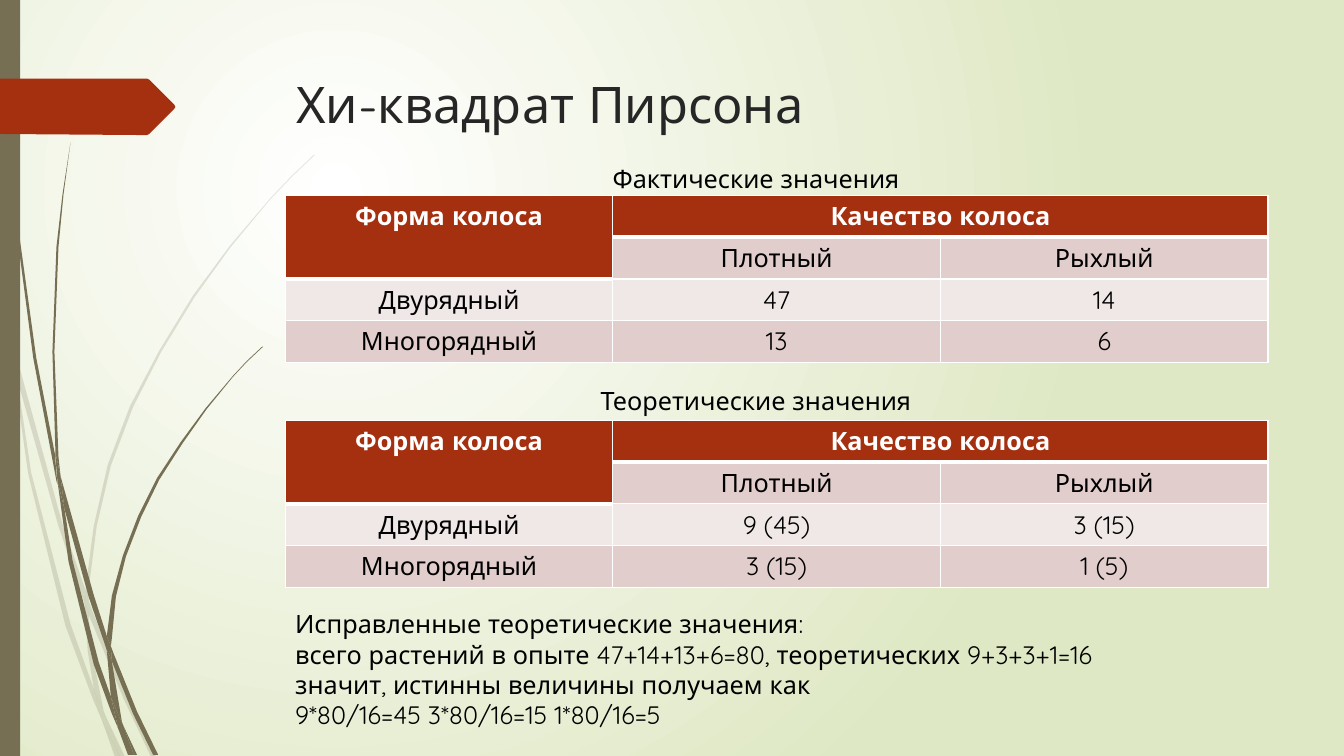
from lxml.etree import SubElement
from pptx import Presentation
from pptx.dml.color import RGBColor
from pptx.enum.shapes import MSO_SHAPE
from pptx.enum.text import MSO_ANCHOR, MSO_AUTO_SIZE, PP_ALIGN
from pptx.oxml.ns import qn
from pptx.util import Cm, Pt

COLORS = {
    "white": "FFFFFF", "meadow": "DFE8C4", "stalk": "766F54", "accent": "A53010",
    "title": "262626", "text": "000000", "dark band": "E1CDCC", "light band": "F0E8E7",
}
INCH = 2.54

PALE_STALKS = [
    [(11, 350), (9, 322), (0, 282), (0, 299), (10, 344)],
    [(58, 522), (84, 599), (85, 586), (62, 520), (14, 345), (17, 376)],
    [(92, 607), (88, 596), (88, 610), (123, 694), (150, 751), (155, 751), (127, 692)],
    [(119, 751), (124, 751), (105, 711)],
    [(93, 683), (70, 619), (31, 469), (17, 376), (11, 350), (28, 470), (65, 621),
     (92, 693), (101, 714), (99, 707)],
    [(84, 599), (87, 646), (93, 683), (96, 692), (105, 711), (103, 706), (91, 646),
     (88, 610), (88, 608)],
    [(88, 584), (96, 522), (110, 462), (132, 404), (160, 349), (193, 295), (229, 245),
     (268, 198), (290, 175), (312, 154), (312, 153), (289, 175), (268, 197), (228, 244),
     (191, 294), (158, 348), (129, 403), (107, 461), (93, 522), (85, 584), (85, 586),
     (88, 596)],
    [(101, 714), (114, 751), (119, 751)],
    [(88, 608), (88, 610), (88, 596), (85, 586), (84, 599)],
    [(96, 692), (93, 683), (99, 707), (101, 714), (119, 751), (105, 711)],
]
DARK_STALKS = [
    [(7, 110), (17, 233), (33, 355), (56, 477), (57, 481), (55, 457), (55, 453),
     (36, 355), (19, 232), (8, 109), (5, 48), (4, 0), (3, 0), (4, 48)],
    [(88, 592), (106, 645), (106, 633), (106, 631), (93, 590), (60, 472), (64, 505)],
    [(113, 649), (110, 641), (111, 656), (132, 708), (152, 749), (157, 749), (136, 706)],
    [(110, 691), (98, 657), (72, 556), (64, 505), (57, 477), (68, 557), (93, 659),
     (111, 708), (117, 722), (116, 717)],
    [(60, 472), (58, 453), (54, 349), (58, 245), (63, 193), (70, 141), (62, 193),
     (56, 245), (52, 349), (55, 449)],
    [(133, 749), (136, 749), (122, 719)],
    [(57, 477), (64, 505), (60, 472), (55, 449), (55, 453)],
    [(111, 633), (115, 592), (125, 552), (140, 513), (158, 476), (181, 440), (205, 406),
     (231, 374), (245, 359), (261, 344), (260, 344), (245, 358), (231, 373), (204, 405),
     (179, 439), (156, 474), (137, 512), (122, 551), (111, 591), (106, 631), (110, 641)],
    [(117, 722), (127, 749), (131, 749)],
    [(106, 645), (110, 691), (116, 706), (122, 719), (121, 716), (111, 656), (109, 651)],
    [(106, 645), (109, 651), (111, 656), (110, 641), (106, 631), (106, 633)],
    [(116, 706), (110, 691), (116, 717), (117, 722), (130, 749), (133, 749), (122, 719)],
]
ARROW = [(173, 108), (148, 133), (146, 134), (136, 134), (0, 133), (0, 78), (146, 78),
         (148, 79), (173, 104), (174, 106)]


def color(name):
    return RGBColor.from_string(COLORS[name])


class SlideBuilder:
    """Draws styled elements on one slide, measured in inches."""

    font_name = "Quicksand"
    text_size = 18

    def __init__(self, presentation):
        self.slide = presentation.slides.add_slide(presentation.slide_layouts[6])
        self.shapes = self.slide.shapes

    def place(self, *lengths):
        return [Cm(length * INCH) for length in lengths]

    def background(self):
        fill = self.slide.background.fill
        fill.gradient()
        for stop, name in zip(fill.gradient_stops, ("white", "meadow")):
            stop.color.rgb = color(name)
        gradient = self.slide.element.find(".//" + qn("a:gradFill"))
        gradient.remove(gradient.find(qn("a:lin")))
        circle = SubElement(gradient, qn("a:path"), path="circle")
        SubElement(circle, qn("a:fillToRect"), l="50000", t="50000", r="100000", b="100000")

    def paint(self, shape, name, opacity=100):
        shape.shadow.inherit = False
        shape.line.fill.background()
        shape.fill.solid()
        shape.fill.fore_color.rgb = color(name)
        if opacity < 100:
            solid = shape.fill._xPr.find(qn("a:solidFill"))
            SubElement(solid[0], qn("a:alpha"), val=str(opacity * 1000))

    def outline(self, shapes, points, name, opacity=100):
        builder = shapes.build_freeform(*points[0], scale=Cm(INCH) / 100)
        builder.add_line_segments(points[1:], close=True)
        self.paint(builder.convert_to_shape(), name, opacity)

    def stalks(self, outlines, opacity):
        group = self.shapes.add_group_shape()
        for points in outlines:
            self.outline(group.shapes, points, "stalk", opacity)

    def bar(self, *box):
        self.paint(self.shapes.add_shape(MSO_SHAPE.RECTANGLE, *self.place(*box)), "stalk")

    def format_text(self, text_frame, size, name, alignment, bold=False):
        for paragraph in text_frame.paragraphs:
            paragraph.alignment = alignment
            for run in paragraph.runs:
                run.font.name = self.font_name
                run.font.size = Pt(size)
                run.font.bold = bold
                run.font.color.rgb = color(name)

    def text(self, text, box, size=text_size, name="text", alignment=PP_ALIGN.LEFT, grow=True):
        text_frame = self.shapes.add_textbox(*self.place(*box)).text_frame
        text_frame.word_wrap = True
        text_frame.auto_size = MSO_AUTO_SIZE.SHAPE_TO_FIT_TEXT if grow else MSO_AUTO_SIZE.NONE
        text_frame.vertical_anchor = MSO_ANCHOR.TOP
        text_frame.text = text
        self.format_text(text_frame, size, name, alignment)

    def borders(self, cell, top, bottom):
        properties = cell._tc.get_or_add_tcPr()
        for side, width in (("L", 1), ("R", 1), ("T", top), ("B", bottom)):
            line = SubElement(properties, qn(f"a:ln{side}"), w=str(Pt(width)))
            solid = SubElement(line, qn("a:solidFill"))
            SubElement(solid, qn("a:srgbClr"), val=COLORS["white"])

    def table(self, rows, box):
        table = self.shapes.add_table(len(rows), len(rows[0]), *self.place(*box)).table
        table.first_row = table.horz_banding = False
        for row, values in enumerate(rows):
            for column, value in enumerate(values):
                cell = table.cell(row, column)
                header_end = 1 if column == 0 else 0
                header = row <= header_end
                self.borders(cell, 3 if row == header_end + 1 else 1,
                             3 if row == header_end else 1)
                cell.fill.solid()
                band = "dark band" if row % 2 else "light band"
                cell.fill.fore_color.rgb = color("accent" if header else band)
                cell.text_frame.text = value
                self.format_text(cell.text_frame, self.text_size,
                                 "white" if header else "text", PP_ALIGN.CENTER, header)
        table.cell(0, 0).merge(table.cell(1, 0))
        table.cell(0, 1).merge(table.cell(0, 2))


def main():
    presentation = Presentation()
    presentation.slide_width = Cm(13.333 * INCH)
    presentation.slide_height = Cm(7.5 * INCH)
    builder = SlideBuilder(presentation)
    builder.background()
    builder.stalks(PALE_STALKS, 20)
    builder.stalks(DARK_STALKS, 100)
    builder.bar(0, 0, 0.2, 7.5)
    builder.outline(builder.shapes, ARROW, "accent")
    builder.text("Хи-квадрат Пирсона", (2.84, 0.68, 9.75, 1.4), 36, "title", grow=False)

    header = [("Форма колоса", "Качество колоса", ""), ("", "Плотный", "Рыхлый")]
    actual = [("Двурядный", "47", "14"), ("Многорядный", "13", "6")]
    expected = [("Двурядный", "9 (45)", "3 (15)"), ("Многорядный", "3 (15)", "1 (5)")]
    for values, top in ((actual, 1.94), (expected, 4.17)):
        builder.table(header + values, (2.83, top, 9.75, 1.65))
    for caption, top in (("Фактические значения", 1.57), ("Теоретические значения", 3.77)):
        builder.text(caption, (5.31, top, 4.38, 0.4), alignment=PP_ALIGN.CENTER)
    builder.text(
        "Исправленные теоретические значения:\n"
        "всего растений в опыте 47+14+13+6=80, теоретических 9+3+3+1=16\n"
        "значит, истинны величины получаем как\n"
        "9*80/16=45 3*80/16=15 1*80/16=5",
        (2.83, 5.99, 9.75, 1.31))
    presentation.save("out.pptx")


if __name__ == "__main__":
    main()
